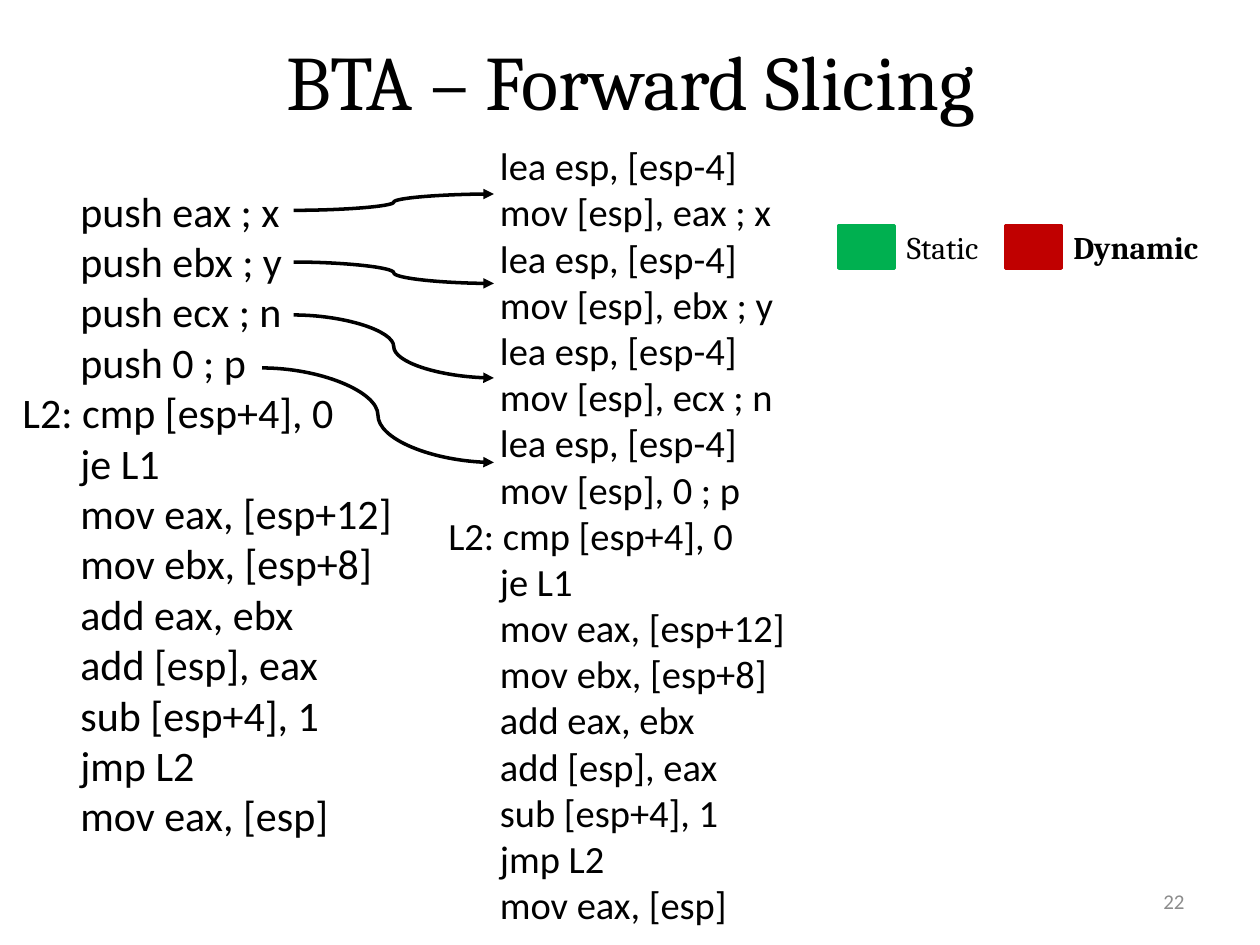
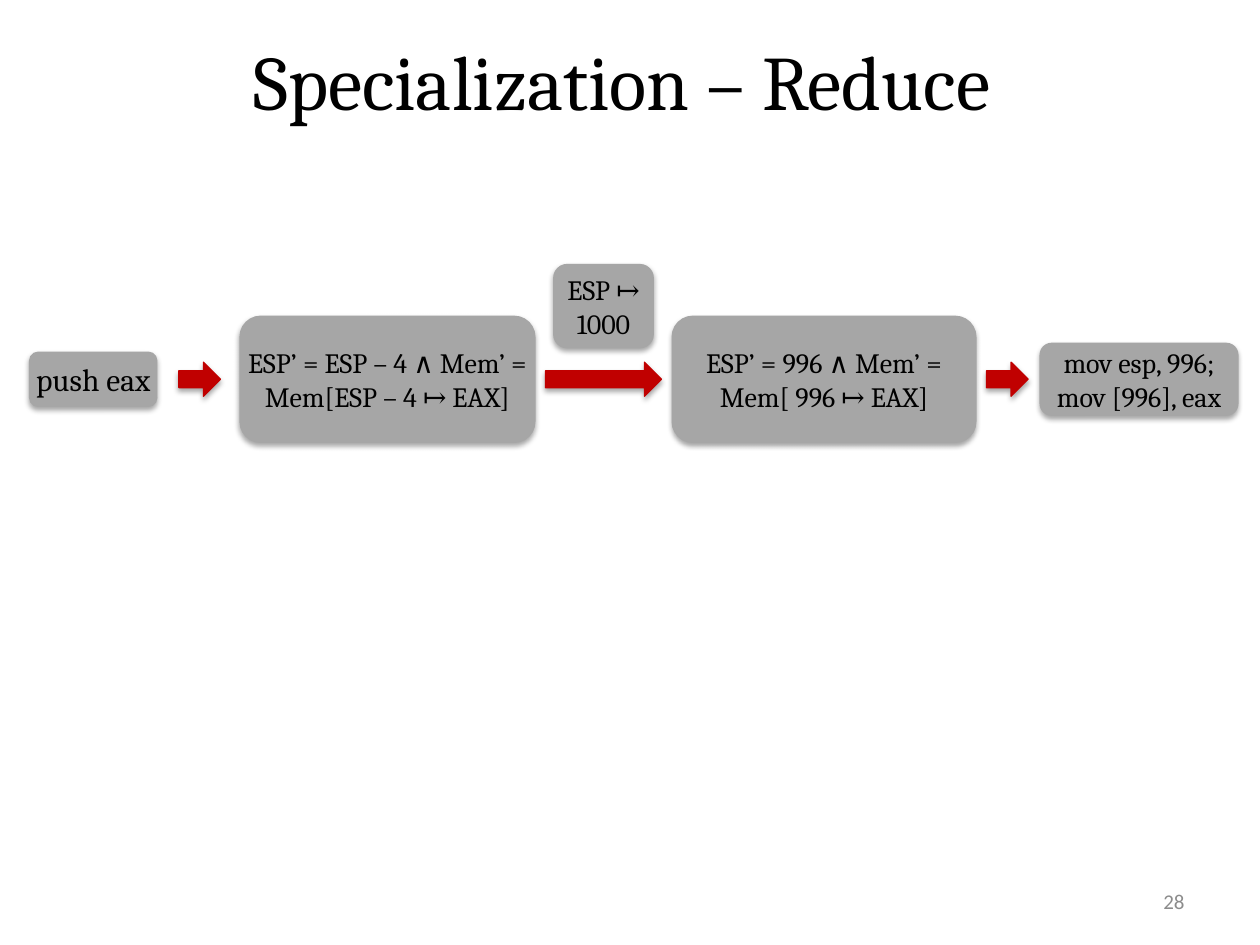
from dataclasses import dataclass

import pptx
import pptx.util
from lxml import etree
from pptx.dml.color import RGBColor
from pptx.enum.shapes import MSO_CONNECTOR, MSO_SHAPE
from pptx.enum.text import MSO_ANCHOR, PP_ALIGN
from pptx.oxml.ns import qn
from pptx.util import Inches

COLORS = {
    "text": "000000",
    "number": "8C8C8C",
    "static": "00B050",
    "dynamic": "C00000",
    "box": "A6A6A6",
}
HEADING, BODY = "Cambria", "Calibri"
FLOW_Y = 3.01  # centre line of the reduction steps
ARROW_H = 0.27


@dataclass
class Listing:
    left: float
    top: float
    width: float
    height: float
    size: float
    indent: float
    lines: list[str]


@dataclass
class Link:
    start: tuple[float, float]
    end: tuple[float, float]


@dataclass
class Key:
    left: float
    label: str
    width: float
    color: str
    bold: bool = False


@dataclass
class Step:
    left: float
    width: float
    height: float
    lines: list[str]
    size: float = 16
    center_y: float = FLOW_Y


@dataclass
class Arrow:
    left: float
    width: float


# Code shared by both listings
LOOP = [
    "L2: cmp [esp+4], 0", "je L1", "mov eax, [esp+12]", "mov ebx, [esp+8]",
    "add eax, ebx", "add [esp], eax", "sub [esp+4], 1", "jmp L2",
    "mov eax, [esp]",
]
ARGUMENTS = {"eax": "x", "ebx": "y", "ecx": "n", "0": "p"}
PUSHES = [f"push {value} ; {name}" for value, name in ARGUMENTS.items()]
MOVES = [line for value, name in ARGUMENTS.items()
         for line in ("lea esp, [esp-4]", f"mov [esp], {value} ; {name}")]

LISTINGS = [
    Listing(0.08, 1.42, 3.15, 5.65, 24, 0.46, PUSHES + LOOP),
    Listing(3.46, 1.08, 2.91, 6.7, 22, 0.41, MOVES + LOOP),
]
LINKS = [
    Link((2.33, 1.67), (3.92, 1.54)),
    Link((2.33, 2.08), (3.92, 2.25)),
    Link((2.33, 2.5), (3.92, 3)),
    Link((2.08, 2.92), (3.92, 3.67)),
]
KEYS = [
    Key(6.66, "Static", 0.8, "static"),
    Key(7.98, "Dynamic", 1.22, "dynamic", bold=True),
]
STEPS = [
    Step(0.23, 1.02, 0.44, ["push eax"], size=18),
    Step(1.9, 2.35, 1.01, ["ESP’ = ESP – 4 ∧ Mem’ = Mem[ESP – 4 ↦ EAX]"]),
    Step(5.33, 2.42, 1.01, ["ESP’ = 996 ∧ Mem’ = Mem[ 996 ↦ EAX]"]),
    Step(4.39, 0.8, 0.67, ["ESP ↦ 1000"], center_y=2.43),
    Step(8.25, 1.58, 0.58, ["mov esp, 996;", "mov [996], eax"]),
]
ARROWS = [Arrow(1.42, 0.33), Arrow(4.33, 0.92), Arrow(7.83, 0.33)]


def rgb(name: str) -> RGBColor:
    return RGBColor.from_string(COLORS[name])


def write(tf, lines: list[str], size: float, font: str, color: str = "text",
          align=PP_ALIGN.LEFT, bold: bool = False) -> None:
    for i, line in enumerate(lines):
        p = tf.paragraphs[0] if i == 0 else tf.add_paragraph()
        p.text = line
        p.alignment = align
        p.font.size = pptx.util.Pt(size)
        p.font.name = font
        p.font.bold = bold
        p.font.color.rgb = rgb(color)


def add_text(s, left: float, top: float, width: float, height: float):
    tf = s.shapes.add_textbox(Inches(left), Inches(top), Inches(width),
                              Inches(height)).text_frame
    tf.word_wrap = True
    return tf


def add_block(s, kind, left: float, top: float, width: float, height: float,
              color: str, line_width: float = 0):
    sp = s.shapes.add_shape(kind, Inches(left), Inches(top), Inches(width),
                            Inches(height))
    sp.shadow.inherit = False
    sp.fill.solid()
    sp.fill.fore_color.rgb = rgb(color)
    if line_width:
        sp.line.color.rgb = rgb(color)
        sp.line.width = pptx.util.Pt(line_width)
    else:
        sp.line.fill.background()
    return sp


def add_shadow(sp) -> None:
    effects = sp._element.spPr.find(qn("a:effectLst"))
    shadow = etree.SubElement(
        effects, qn("a:outerShdw"), blurRad=str(pptx.util.Pt(3.1)),
        dist=str(pptx.util.Pt(1.8)), dir="5400000", rotWithShape="0")
    color = etree.SubElement(shadow, qn("a:srgbClr"), val=COLORS["text"])
    etree.SubElement(color, qn("a:alpha"), val="35000")


def add_slide(prs, title: str, number: int):
    s = prs.slides.add_slide(prs.slide_layouts[5])
    sp = s.shapes.title
    sp.left, sp.top = Inches(0.17), Inches(0.17)
    sp.width, sp.height = Inches(9.67), Inches(0.92)
    sp.text_frame.vertical_anchor = MSO_ANCHOR.MIDDLE
    write(sp.text_frame, [title], 44, HEADING, align=PP_ALIGN.CENTER)
    tf = add_text(s, 7.17, 6.95, 2.33, 0.4)
    tf.vertical_anchor = MSO_ANCHOR.MIDDLE
    write(tf, [str(number)], 12, BODY, "number", PP_ALIGN.RIGHT)
    return s


def add_listing(s, listing: Listing) -> None:
    tf = add_text(s, listing.left, listing.top, listing.width, listing.height)
    tf.margin_right = 0
    write(tf, listing.lines, listing.size, BODY)
    for p in tf.paragraphs:
        if not p.text.startswith("L2:"):
            p._p.get_or_add_pPr().set("marL", str(Inches(listing.indent)))


def add_link(s, link: Link) -> None:
    x1, y1, x2, y2 = (Inches(v) for v in link.start + link.end)
    c = s.shapes.add_connector(MSO_CONNECTOR.CURVE, x1, y1, x2, y2)
    c.line.color.rgb = rgb("text")
    c.line.width = pptx.util.Pt(2)
    etree.SubElement(c.line._get_or_add_ln(), qn("a:tailEnd"), type="triangle")
    etree.SubElement(c._element.spPr, qn("a:effectLst"))


def add_key(s, key: Key) -> None:
    add_block(s, MSO_SHAPE.RECTANGLE, key.left, 1.79, 0.44, 0.34, key.color, 2)
    tf = add_text(s, key.left + 0.44, 1.76, key.width, 0.4)
    tf.margin_right = 0
    write(tf, [key.label], 18, HEADING, bold=key.bold)


def add_step(s, step: Step) -> None:
    sp = add_block(s, MSO_SHAPE.ROUNDED_RECTANGLE, step.left,
                   step.center_y - step.height / 2, step.width, step.height,
                   "box")
    add_shadow(sp)
    tf = sp.text_frame
    tf.margin_left = tf.margin_right = tf.margin_top = tf.margin_bottom = 0
    tf.vertical_anchor = MSO_ANCHOR.MIDDLE
    write(tf, step.lines, step.size, HEADING, align=PP_ALIGN.CENTER)


def add_arrow(s, arrow: Arrow) -> None:
    add_shadow(add_block(s, MSO_SHAPE.RIGHT_ARROW, arrow.left,
                         FLOW_Y - ARROW_H / 2, arrow.width, ARROW_H,
                         "dynamic", 0.75))


def main() -> None:
    prs = pptx.Presentation()
    prs.slide_width, prs.slide_height = Inches(10), Inches(7.5)

    # Forward slicing: pushes expanded into explicit stack moves
    s = add_slide(prs, "BTA – Forward Slicing", 22)
    for listing in LISTINGS:
        add_listing(s, listing)
    for link in LINKS:
        add_link(s, link)
    for key in KEYS:
        add_key(s, key)

    # Reduction: one instruction followed through its steps
    s = add_slide(prs, "Specialization – Reduce ", 28)
    for step in STEPS:
        add_step(s, step)
    for arrow in ARROWS:
        add_arrow(s, arrow)

    prs.save("out.pptx")


if __name__ == "__main__":
    main()
